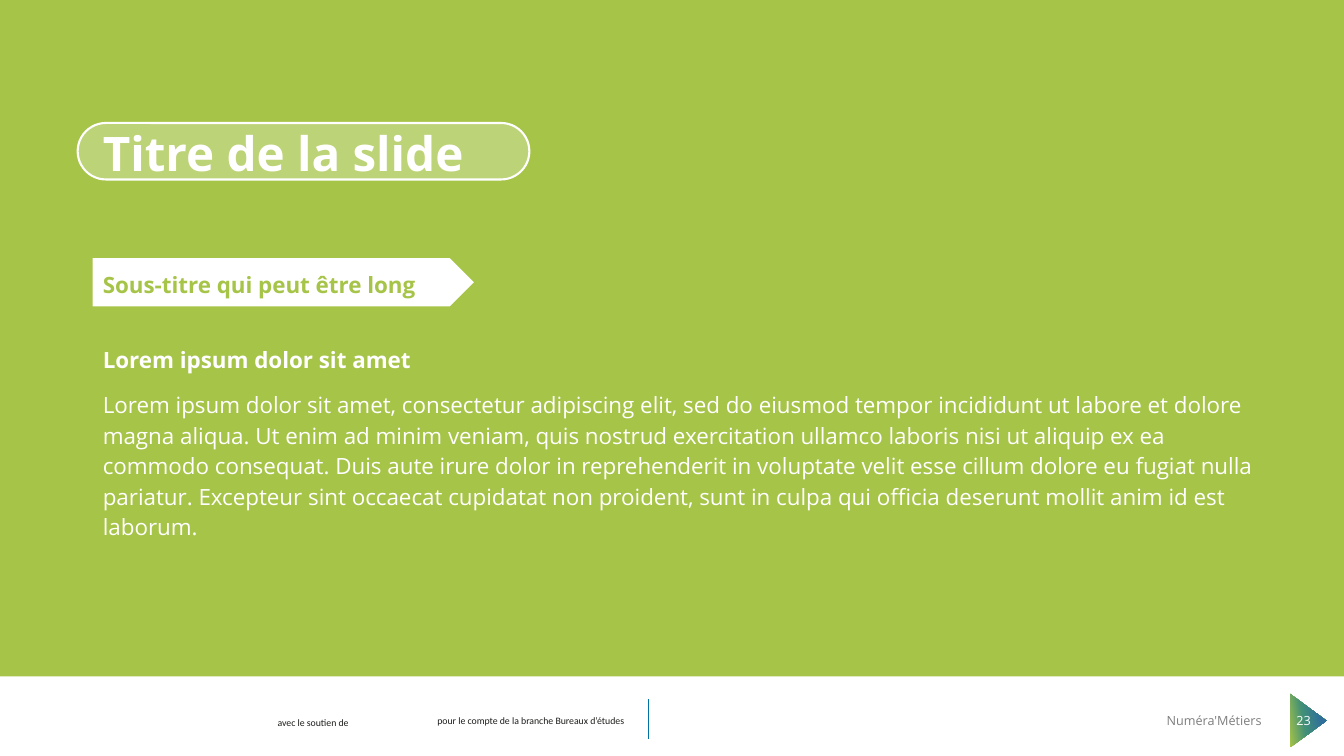
from dataclasses import dataclass

from lxml.etree import SubElement
from pptx import Presentation
from pptx.dml.color import RGBColor
from pptx.enum.shapes import MSO_CONNECTOR, MSO_SHAPE
from pptx.enum.text import MSO_ANCHOR, MSO_AUTO_SIZE, PP_ALIGN
from pptx.oxml.ns import qn
from pptx.shapes.autoshape import Shape
from pptx.slide import Slide
from pptx.util import Emu, Inches, Pt

GREEN = RGBColor(0xA6, 0xC4, 0x48)
TEAL = RGBColor(0x41, 0x90, 0x79)
BLUE = RGBColor(0x30, 0x6F, 0x9C)
RULE_BLUE = RGBColor(0x00, 0x73, 0xA6)
WHITE = RGBColor(0xFF, 0xFF, 0xFF)
INK = RGBColor(0x1D, 0x1D, 0x1B)
GREY = RGBColor(0x7D, 0x7E, 0x7D)

SLIDE_WIDTH, SLIDE_HEIGHT = Inches(13.33), Inches(7.5)
MARGIN = 6.9  # left edge shared by title, subtitle and body
BODY_WIDTH = 87.7
TEXT_FONT = "Open Sans"

LOREM = (
    "Lorem ipsum dolor sit amet, consectetur adipiscing elit, sed do eiusmod tempor "
    "incididunt ut labore et dolore magna aliqua. Ut enim ad minim veniam, quis nostrud "
    "exercitation ullamco laboris nisi ut aliquip ex ea commodo consequat. Duis aute irure "
    "dolor in reprehenderit in voluptate velit esse cillum dolore eu fugiat nulla pariatur. "
    "Excepteur sint occaecat cupidatat non proident, sunt in culpa qui officia deserunt "
    "mollit anim id est laborum."
)


@dataclass(frozen=True)
class Area:
    """Position and size in percent of the slide."""
    left: float
    top: float
    width: float
    height: float

    def emu(self) -> tuple[Emu, Emu, Emu, Emu]:
        return (across(self.left), down(self.top), across(self.width), down(self.height))


@dataclass(frozen=True)
class Line:
    text: str
    size: float
    color: RGBColor
    bold: bool = False
    font: str = TEXT_FONT


@dataclass(frozen=True)
class Block:
    area: Area
    lines: tuple[Line, ...]
    align: PP_ALIGN = PP_ALIGN.LEFT
    anchor: MSO_ANCHOR = MSO_ANCHOR.TOP
    spacing: float = 1.0


def across(percent: float) -> Emu:
    return Emu(round(SLIDE_WIDTH * percent / 100))


def down(percent: float) -> Emu:
    return Emu(round(SLIDE_HEIGHT * percent / 100))


def add_form(slide: Slide, kind: MSO_SHAPE, area: Area, color: RGBColor) -> Shape:
    form = slide.shapes.add_shape(kind, *area.emu())
    form.shadow.inherit = False
    form.fill.solid()
    form.fill.fore_color.rgb = color
    form.line.fill.background()
    return form


def fill_gradient(form: Shape, stops: dict[int, RGBColor], angle: float) -> None:
    form.fill.gradient()
    form.fill.gradient_angle = angle
    stop_list = form.element.find(".//" + qn("a:gsLst"))
    stop_list.clear()
    for percent, color in stops.items():
        stop = SubElement(stop_list, qn("a:gs"), pos=str(percent * 1000))
        SubElement(stop, qn("a:srgbClr"), val=str(color))


def write_block(holder: Shape, block: Block) -> None:
    holder.left, holder.top, holder.width, holder.height = block.area.emu()
    frame = holder.text_frame
    frame.word_wrap = True
    frame.auto_size = MSO_AUTO_SIZE.NONE
    frame.vertical_anchor = block.anchor
    for index, line in enumerate(block.lines):
        paragraph = frame.add_paragraph() if index else frame.paragraphs[0]
        properties = paragraph._p.get_or_add_pPr()
        properties.set("marL", "0")
        properties.set("indent", "0")
        SubElement(properties, qn("a:buNone"))
        paragraph.alignment = block.align
        paragraph.line_spacing = block.spacing
        paragraph.space_before = Pt(10 if index else 0)
        run = paragraph.add_run()
        run.text = line.text
        run.font.name = line.font
        run.font.size = Pt(line.size)
        run.font.bold = line.bold
        run.font.color.rgb = line.color


TITLE = Block(Area(MARGIN, 5.33, 86.27, 19.33),
              (Line("Titre de la slide", 34, WHITE, True),),
              anchor=MSO_ANCHOR.BOTTOM, spacing=0.9)
SUBTITLE = Block(Area(MARGIN, 32.53, BODY_WIDTH, 9.6),
                 (Line("Sous-titre qui peut être long", 16, GREEN, True),),
                 anchor=MSO_ANCHOR.MIDDLE, spacing=1.14)
BODY = Block(Area(MARGIN, 44.67, BODY_WIDTH, 38.4),
             (Line("Lorem ipsum dolor sit amet", 16, WHITE, True), Line(LOREM, 16, WHITE)),
             spacing=1.14)
FOOTER = (
    Block(Area(17.93, 94.13, 10.73, 2.93),
          (Line("avec le soutien de", 7, INK, font="Calibri"),), PP_ALIGN.CENTER),
    Block(Area(27.38, 93.87, 24.23, 2.93),
          (Line("pour le compte de la branche Bureaux d’études", 7, INK, font="Calibri"),),
          PP_ALIGN.CENTER),
    Block(Area(67.59, 92.67, 27.01, 5.33),
          (Line("Numéra'Métiers", 9, GREY),), PP_ALIGN.RIGHT, MSO_ANCHOR.MIDDLE),
    Block(Area(94.6, 92.67, 4.8, 5.33),
          (Line("23", 9, WHITE),), PP_ALIGN.CENTER, MSO_ANCHOR.MIDDLE),
)


def main() -> None:
    presentation = Presentation()
    presentation.slide_width, presentation.slide_height = SLIDE_WIDTH, SLIDE_HEIGHT
    slide = presentation.slides.add_slide(presentation.slide_layouts[3])

    # Green panel and page marker
    add_form(slide, MSO_SHAPE.RECTANGLE, Area(0, 0, 100, 89.47), GREEN)
    marker = add_form(slide, MSO_SHAPE.ISOSCELES_TRIANGLE,
                      Area(95.35, 92.93, 3.98, 4.8), GREEN)
    marker.rotation = 90
    fill_gradient(marker, {0: GREEN, 41: TEAL, 80: BLUE}, 100)

    # Footer rule
    rule = slide.shapes.add_connector(MSO_CONNECTOR.STRAIGHT, across(48.24), down(97.73),
                                      across(48.24), down(92.53))
    rule.line.color.rgb = RULE_BLUE
    rule.line.width = Pt(0.5)
    SubElement(rule.element.spPr, qn("a:effectLst"))

    # Title pill, translucent white
    pill = add_form(slide, MSO_SHAPE.ROUNDED_RECTANGLE,
                    Area(5.78, 16.27, 33.61, 7.47), WHITE)
    pill.adjustments[0] = 0.5
    pill.line.color.rgb = WHITE
    pill.line.width = Pt(1.5)
    pill_color = pill.element.spPr.find(qn("a:solidFill")).find(qn("a:srgbClr"))
    SubElement(pill_color, qn("a:alpha"), val="26000")

    # Subtitle arrow
    arrow = add_form(slide, MSO_SHAPE.RIGHT_ARROW, Area(MARGIN, 34.13, 28.36, 6.4), WHITE)
    arrow.adjustments[0] = 1
    arrow.adjustments[1] = 0.5

    # Placeholders, brought in front of the panel
    for holder, block in zip(list(slide.placeholders), (TITLE, SUBTITLE, BODY)):
        write_block(holder, block)
        slide.shapes.element.append(holder.element)

    # Footer texts
    for block in FOOTER:
        write_block(slide.shapes.add_textbox(*block.area.emu()), block)

    presentation.save("out.pptx")


if __name__ == "__main__":
    main()
